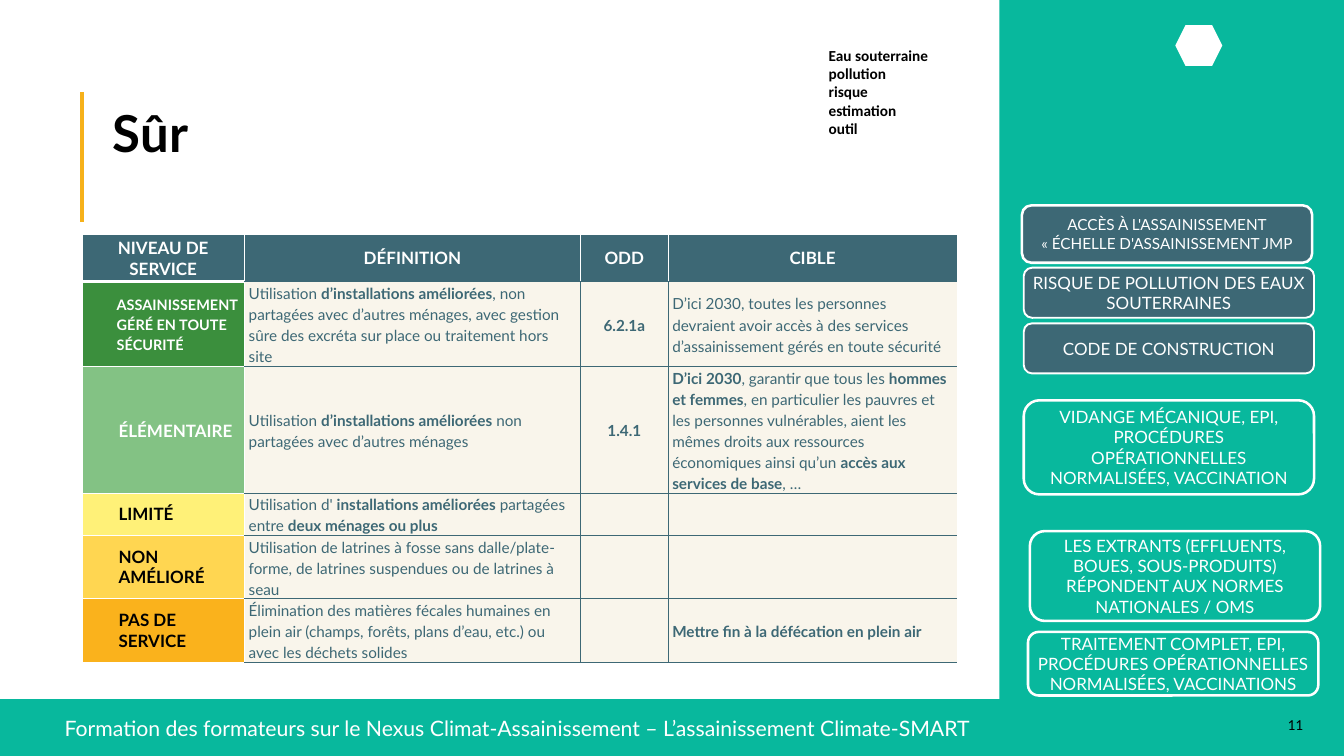
from dataclasses import dataclass
from lxml.etree import SubElement
from pptx import Presentation
from pptx.dml.color import RGBColor
from pptx.enum.shapes import MSO_CONNECTOR, MSO_SHAPE
from pptx.enum.text import MSO_ANCHOR, MSO_AUTO_SIZE, PP_ALIGN
from pptx.oxml.ns import qn
from pptx.util import Pt

SCALE = 9144


@dataclass(frozen=True)
class Theme:
    green: str = "08B89D"
    slate: str = "3D6875"
    cream: str = "F9F5EB"
    amber: str = "F6B11A"
    white: str = "FFFFFF"
    black: str = "000000"
    safe: str = "3B8F3D"
    basic: str = "83C284"
    limited: str = "FFF178"
    unimproved: str = "FFD651"
    none: str = "FAB21C"
    font: str = "Lato"
    plain_font: str = "Calibri"
    title: int = 60
    footer: int = 25
    label: int = 20
    body: int = 18
    small: int = 17


T = Theme()

HEADERS = ["NIVEAU DE SERVICE", "DÉFINITION", "ODD", "CIBLE"]
COLUMNS = [266, 550, 143, 473]
ROWS = [75, 137, 208, 69, 103, 105]
LEVELS = [
    ("ASSAINISSEMENT GÉRÉ EN TOUTE SÉCURITÉ", T.safe, T.white, T.small, 7, 1.15),
    ("ÉLÉMENTAIRE", T.basic, T.white, T.label, 10, 1.15),
    ("LIMITÉ", T.limited, T.black, T.label, 10, 1.0),
    ("NON AMÉLIORÉ", T.unimproved, T.black, T.label, 10, 1.0),
    ("PAS DE SERVICE", T.none, T.black, T.label, 10, 1.0),
]
DETAILS = [
    ("Utilisation *d’installations améliorées*, non partagées avec d’autres ménages, "
     "avec gestion sûre des excréta sur place ou traitement hors site",
     "*6.2.1a*",
     "D’ici 2030, toutes les personnes devraient avoir accès à des services "
     "d’assainissement gérés en toute sécurité"),
    ("Utilisation *d’installations améliorées* non partagées avec d’autres ménages",
     "*1.4.1*",
     "*D’ici 2030*, garantir que tous les *hommes et femmes*, en particulier les "
     "pauvres et les personnes vulnérables, aient les mêmes droits aux ressources "
     "économiques ainsi qu’un *accès aux services de base*, …"),
    ("Utilisation d' *installations améliorées* partagées entre *deux ménages ou plus*",
     "", ""),
    ("Utilisation de latrines à fosse sans dalle/plate-forme, de latrines suspendues "
     "ou de latrines à seau", "", ""),
    ("Élimination des matières fécales humaines en plein air (champs, forêts, plans "
     "d’eau, etc.) ou avec les déchets solides",
     "", "*Mettre fin à la défécation en plein air*"),
]
TOPICS = [
    ((1672, 336, 475, 94), "ACCÈS À L'ASSAINISSEMENT\n« ÉCHELLE D'ASSAINISSEMENT JMP",
     T.slate, 3, T.body),
    ((1675, 438, 475, 82), "RISQUE DE POLLUTION DES EAUX SOUTERRAINES",
     T.slate, 2.25, T.label),
    ((1675, 529, 475, 82), "CODE DE CONSTRUCTION", T.slate, 2.25, T.label),
    ((1675, 655, 475, 154),
     "VIDANGE MÉCANIQUE, EPI, PROCÉDURES OPÉRATIONNELLES NORMALISÉES, VACCINATION",
     None, 3, T.label),
    ((1685, 869, 475, 147),
     "LES EXTRANTS (EFFLUENTS, BOUES, SOUS-PRODUITS) RÉPONDENT AUX NORMES "
     "NATIONALES / OMS", None, 3, T.label),
    ((1682, 1034, 475, 104),
     "TRAITEMENT COMPLET, EPI, PROCÉDURES OPÉRATIONNELLES NORMALISÉES, VACCINATIONS",
     None, 3, T.label),
]


def px(*values):
    return [value * SCALE for value in values]


def rgb(color):
    return RGBColor.from_string(color)


def apply(obj, formats):
    for name, value in formats.items():
        setattr(obj, name, value)


def write(tf, text, size, color, font=T.font, bold=False, **paragraph):
    for i, line in enumerate(text.split("\n")):
        p = tf.paragraphs[0] if i == 0 else tf.add_paragraph()
        apply(p, paragraph)
        apply(p.font, {"size": Pt(size), "name": font})
        for j, part in enumerate(line.split("*")):
            if part:
                r = p.add_run()
                r.text = part
                apply(r.font, {"size": Pt(size), "name": font,
                               "bold": bold or j % 2 == 1})
                r.font.color.rgb = rgb(color)


def add_box(s, kind, box, fill=None, line=None, width=0):
    sp = s.shapes.add_shape(kind, *px(*box))
    sp.shadow.inherit = False
    if fill:
        sp.fill.solid()
        sp.fill.fore_color.rgb = rgb(fill)
    else:
        sp.fill.background()
    if line:
        sp.line.color.rgb = rgb(line)
        sp.line.width = Pt(width)
    else:
        sp.line.fill.background()
    return sp


def add_topic(s, box, text, fill, width, size):
    sp = add_box(s, MSO_SHAPE.ROUNDED_RECTANGLE, box, fill, T.white, width)
    apply(sp.text_frame, {"word_wrap": True, "vertical_anchor": MSO_ANCHOR.MIDDLE})
    write(sp.text_frame, text, size, T.white, alignment=PP_ALIGN.CENTER)


def add_text(s, box, text, size, color, wrap=True, grow=True, **style):
    tf = s.shapes.add_textbox(*px(*box)).text_frame
    fit = MSO_AUTO_SIZE.SHAPE_TO_FIT_TEXT if grow else MSO_AUTO_SIZE.NONE
    apply(tf, {"word_wrap": wrap, "auto_size": fit})
    write(tf, text, size, color, **style)


def add_rule(s, x, top, bottom, color, width):
    c = s.shapes.add_connector(MSO_CONNECTOR.STRAIGHT, *px(x, top, x, bottom))
    c.line.color.rgb = rgb(color)
    c.line.width = Pt(width)
    SubElement(c._element.spPr, qn("a:effectLst"))


def style_cell(cell, fill, borders, margins):
    tcPr = cell._tc.get_or_add_tcPr()
    for side, (color, width) in zip("LRTB", borders):
        ln = SubElement(tcPr, qn(f"a:ln{side}"), w=str(Pt(width)))
        solid = SubElement(ln, qn("a:solidFill"))
        SubElement(solid, qn("a:srgbClr"), val=color)
    cell.fill.solid()
    cell.fill.fore_color.rgb = rgb(fill)
    names = ("margin_left", "margin_top", "margin_right", "margin_bottom")
    apply(cell, dict(zip(names, px(*margins))))
    cell.vertical_anchor = MSO_ANCHOR.MIDDLE


def add_service_table(s, x, y):
    frame = s.shapes.add_table(len(ROWS), len(COLUMNS),
                               *px(x, y, sum(COLUMNS), sum(ROWS)))
    table = frame.table
    apply(table, {"first_row": False, "horz_banding": False})
    for column, width in zip(table.columns, COLUMNS):
        column.width = width * SCALE
    for row, height in zip(table.rows, ROWS):
        row.height = height * SCALE
    white, slate = (T.white, 1), (T.slate, 1)
    spacing = {"space_before": Pt(3), "space_after": Pt(3)}

    for c, text in enumerate(HEADERS):
        cell = table.cell(0, c)
        bottom = (T.white, 3) if c == 0 else slate
        style_cell(cell, T.slate, [white, white, white, bottom], (10, 5, 10, 5))
        write(cell.text_frame, text, T.label, T.white, bold=True,
              alignment=PP_ALIGN.CENTER)

    for r, (level, details) in enumerate(zip(LEVELS, DETAILS), 1):
        text, fill, color, size, inset, leading = level
        cell = table.cell(r, 0)
        top = (T.white, 3) if r == 1 else white
        style_cell(cell, fill, [white, white, top, white], (50 + inset, 0, inset, 0))
        write(cell.text_frame, text, size, color, bold=True, line_spacing=leading)
        for c, detail in enumerate(details, 1):
            cell = table.cell(r, c)
            left = white if c == 1 else slate
            right = white if c == 3 else slate
            style_cell(cell, T.cream, [left, right, slate, slate], (7, 0, 7, 0))
            align = PP_ALIGN.CENTER if c == 2 else PP_ALIGN.LEFT
            write(cell.text_frame, detail, T.body, T.slate, alignment=align,
                  line_spacing=1.15, **spacing)


def main():
    prs = Presentation()
    prs.slide_width, prs.slide_height = px(2199, 1237)
    s = prs.slides.add_slide(prs.slide_layouts[6])
    add_box(s, MSO_SHAPE.RECTANGLE, (1635, 0, 564, 1237), T.green)
    add_box(s, MSO_SHAPE.RECTANGLE, (0, 1144, 2199, 93), T.green)
    add_box(s, MSO_SHAPE.HEXAGON, (1923, 41, 77, 67), T.white)
    add_rule(s, 134, 151, 363, T.amber, 4.95)
    add_text(s, (175, 162, 1082, 111), "Sûr", T.title, T.black, bold=True)
    for topic in TOPICS:
        add_topic(s, *topic)
    add_service_table(s, 134, 384)
    add_text(s, (1346, 70, 184, 162),
             "Eau souterraine\npollution\nrisque\nestimation\noutil",
             T.body, T.black, wrap=False, font=T.plain_font, bold=True)
    add_text(s, (96, 1166, 1879, 52),
             "Formation des formateurs sur le Nexus Climat-Assainissement – "
             "L’assainissement Climate-SMART", T.footer, T.white)
    add_text(s, (1636, 1165, 506, 30), "11", T.body, T.black, grow=False,
             font=T.plain_font, alignment=PP_ALIGN.RIGHT)
    prs.save("out.pptx")


if __name__ == "__main__":
    main()
